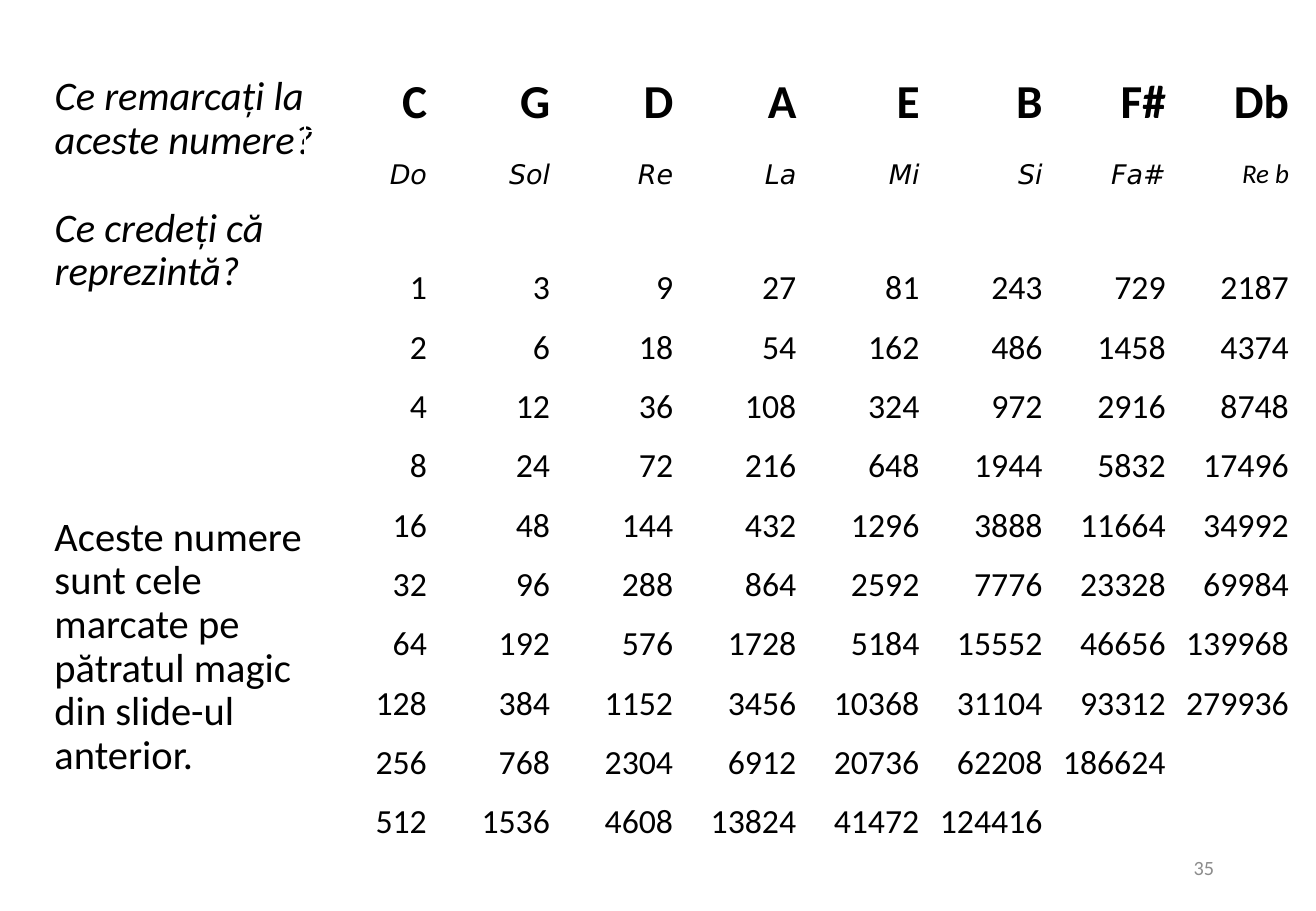
from pptx import Presentation
from pptx.dml.color import RGBColor
from pptx.enum.text import MSO_ANCHOR as Anchor, MSO_AUTO_SIZE as Auto, PP_ALIGN as Align
from pptx.util import Inches, Pt


def color(code):
    """Turn a hex string into a colour."""
    return RGBColor.from_string(code)


class Page:
    """Holds the style and the current slide."""
    face = "Calibri"
    ink = "000000"

    def __init__(self, deck):
        """Add a slide with a title only."""
        self.slide = deck.slides.add_slide(deck.slide_layouts[5])

    def style(self, para, size, align=Align.LEFT, face=None, ink=None, bold=False, italic=False):
        """Format one paragraph."""
        para.alignment = align
        font = para.font
        font.name, font.size = face or self.face, Pt(size)
        font.bold, font.italic = bold, italic
        font.color.rgb = color(ink or self.ink)

    def fill(self, shape, lines, size, box, anchor=Anchor.TOP, gap=0, **look):
        """Place a shape and fill it with paragraphs."""
        shape.left, shape.top, shape.width, shape.height = (Inches(n) for n in box)
        frame = shape.text_frame
        frame.word_wrap, frame.auto_size = True, Auto.NONE
        frame.vertical_anchor = anchor
        frame.text = "\n".join(lines)
        for i, para in enumerate(frame.paragraphs):
            para.line_spacing = 0.9
            para.space_before = Pt(gap if i else 0)
            self.style(para, size, **look)

    def title(self, lines, size, box, **look):
        """Fill the title placeholder."""
        self.fill(self.slide.shapes.title, lines, size, box, **look)

    def text(self, lines, size, box, **look):
        """Add a text box."""
        shape = self.slide.shapes.add_textbox(0, 0, 0, 0)
        self.fill(shape, lines, size, box, **look)

    def table(self, rows, looks, box, head):
        """Add a plain table with right-aligned cells."""
        area = [Inches(n) for n in box]
        grid = self.slide.shapes.add_table(len(rows), len(rows[0]), *area).table
        grid.first_row = grid.horz_banding = False
        for i, row in enumerate(grid.rows):
            row.height = Inches((box[3] - head) / (len(rows) - 1) if i else head)
            for j, cell in enumerate(row.cells):
                cell.fill.background()
                cell.vertical_anchor = Anchor.BOTTOM
                cell.margin_left = cell.margin_right = cell.margin_top = Inches(0.01)
                cell.margin_bottom = 0
                cell.text = rows[i][j]
                look = dict(looks[min(i, len(looks) - 1)])
                if rows[i][j] == "Re b":
                    look["face"] = self.face
                self.style(cell.text_frame.paragraphs[0], align=Align.RIGHT, **look)


def main():
    """Build the slide and save it."""
    deck = Presentation()
    deck.slide_width, deck.slide_height = Inches(10.83), Inches(7.5)
    page = Page(deck)
    page.title(["Ce remarcați la aceste numere?", "Ce credeți că reprezintă?"], 24,
               (0.35, 0.57, 2.55, 3.03), gap=26.3, italic=True)

    notes = ["C", "G", "D", "A", "E", "B", "F#", "Db"]
    names = ["Do", "Sol", "Re", "La", "Mi", "Si", "Fa#", "Re b"]
    top = 300000
    powers = [[3 ** j * 2 ** i for j in range(len(notes))] for i in range(10)]
    values = [[str(n) if n < top else "" for n in row] for row in powers]
    looks = [dict(size=28, bold=True),
             dict(size=16, face="DejaVu Sans", italic=True),
             dict(size=20)]
    page.table([notes, names, [""] * len(notes), *values], looks,
               (2.51, 0.57, 8.11, 6.37), head=0.51)

    page.text(["Aceste numere sunt cele marcate pe pătratul magic din slide-ul anterior."],
              24, (0.35, 4.2, 2.55, 3.03))
    page.text(["35"], 12, (7.65, 6.95, 2.44, 0.4), anchor=Anchor.MIDDLE,
              align=Align.RIGHT, ink="8C8C8C")
    deck.save("out.pptx")


if __name__ == "__main__":
    main()
